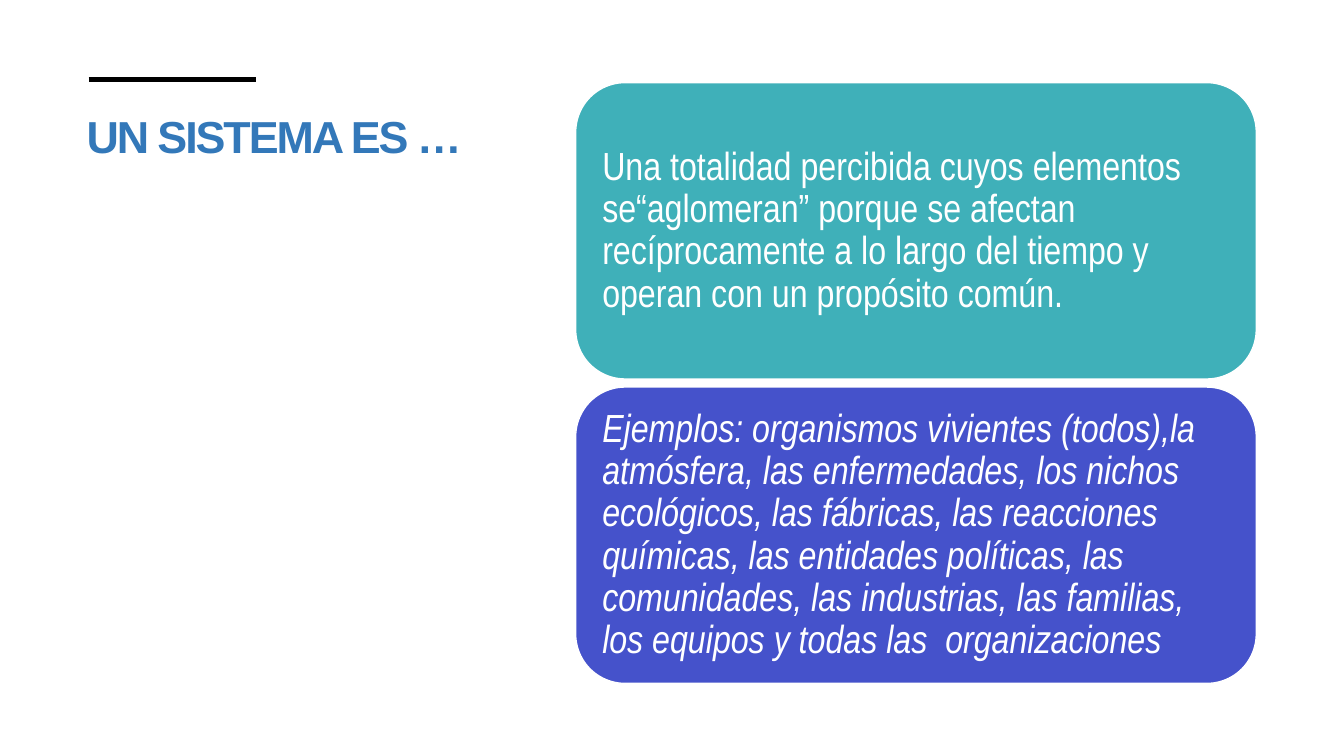
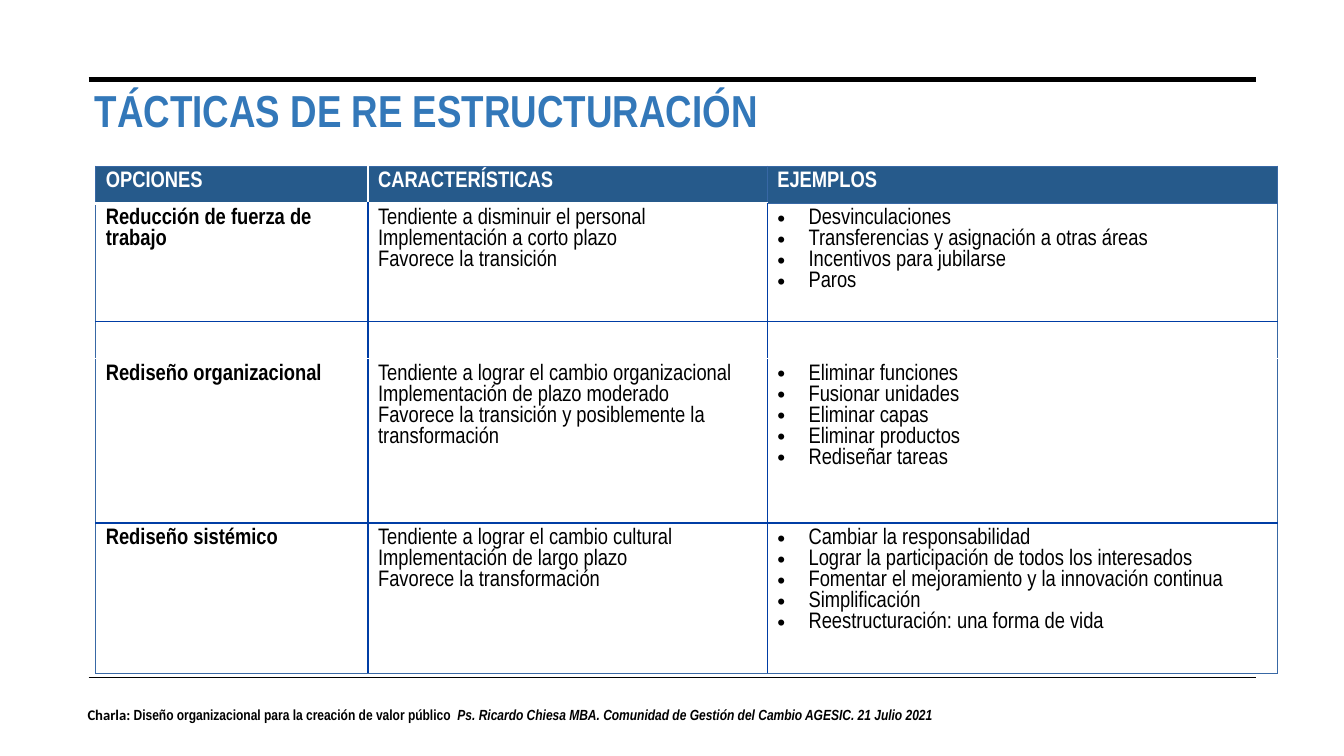
from dataclasses import dataclass

from lxml import etree
from pptx import Presentation
from pptx.dml.color import RGBColor
from pptx.enum import shapes, text
from pptx.oxml import ns
from pptx.util import Inches, Pt


@dataclass(frozen=True)
class Theme:
    black: str = "000000"
    white: str = "FFFFFF"
    title: str = "3378B9"
    teal: str = "3FB0B9"
    indigo: str = "4552CB"
    header: str = "265A8B"
    frame: str = "3868A5"
    grid: str = "003DA5"
    sans: str = "Arial"
    narrow: str = "Arial Narrow"
    footer_font: str = "Calibri"
    title_size: float = 32
    card_size: float = 28
    table_size: float = 16
    footer_size: float = 10.5
    table_leading: float = 15


T = Theme()
LEFT, RIGHT, RULE_Y = 0.88, 12.46, 0.79

CARDS = [
    ("Una totalidad percibida cuyos elementos se“aglomeran” porque se afectan "
     "recíprocamente a lo largo del tiempo y operan con un propósito común.",
     T.teal, False),
    ("Ejemplos: organismos vivientes (todos),la atmósfera, las enfermedades, "
     "los nichos ecológicos, las fábricas, las reacciones químicas, las "
     "entidades políticas, las comunidades, las industrias, las familias, "
     "los equipos y todas las  organizaciones", T.indigo, True),
]

HEADINGS = [["OPCIONES"], ["CARACTERÍSTICAS"], ["EJEMPLOS"]]
TACTICS = [
    [["Reducción de fuerza de trabajo"],
     ["Tendiente a disminuir el personal", "Implementación a corto plazo",
      "Favorece la transición"],
     ["Desvinculaciones", "Transferencias y asignación a otras áreas",
      "Incentivos para jubilarse", "Paros"]],
    [[], [], []],
    [["Rediseño organizacional"],
     ["Tendiente a lograr el cambio organizacional",
      "Implementación de plazo moderado",
      "Favorece la transición y posiblemente la transformación"],
     ["Eliminar funciones", "Fusionar unidades", "Eliminar capas",
      "Eliminar productos", "Rediseñar tareas"]],
    [["Rediseño sistémico"],
     ["Tendiente a lograr el cambio cultural", "Implementación de largo plazo",
      "Favorece la transformación"],
     ["Cambiar la responsabilidad",
      "Lograr la participación de todos los interesados",
      "Fomentar el mejoramiento y la innovación continua",
      "Simplificación", "Reestructuración: una forma de vida"]],
]
COLUMN_WIDTHS = [2.7, 3.96, 5.06]
ROW_HEIGHTS = [0.37, 1.17, 0.37, 1.63, 1.49]

# Edge colour and width; horizontal edges run top to bottom
FRAME, GRID, GAP = (T.frame, 1), (T.grid, 1), (T.white, 1)
ROW_EDGES = [FRAME, (T.white, 3), GRID, GAP, GRID, FRAME]
HEADER_SIDES = [FRAME, GAP, FRAME, FRAME]
BODY_SIDES = [FRAME, GRID, GRID, FRAME]


def rgb(value):
    return RGBColor.from_string(value)


def sub(parent, tag, **attributes):
    return etree.SubElement(parent, ns.qn(tag), attributes)


def write(frame, paragraphs, *, size, font=T.narrow, color=T.black, bold=False,
          italic=False, tracking=None, leading=None, bullet=False):
    """Fill a frame; a paragraph is a string or a list of (text, font, italic)."""
    for index, content in enumerate(paragraphs):
        para = frame.paragraphs[0] if index == 0 else frame.add_paragraph()
        para.alignment = text.PP_ALIGN.LEFT
        if leading:
            para.line_spacing = leading
        if bullet:
            props = para._p.get_or_add_pPr()
            props.set("marL", str(Inches(0.31)))
            props.set("indent", str(-Inches(0.31)))
            sub(props, "a:buFont", typeface=T.sans)
            sub(props, "a:buChar", char="•")
        pieces = [(content, font, italic)] if isinstance(content, str) else content
        for words, face, slanted in pieces:
            run = para.add_run()
            run.text = words
            run.font.name, run.font.size = face, Pt(size)
            run.font.bold, run.font.italic = bold, slanted
            run.font.color.rgb = rgb(color)
            if tracking:
                run._r.get_or_add_rPr().set("spc", str(round(tracking * 100)))


def text_box(slide, box, paragraphs, wrap=True, **style):
    frame = slide.shapes.add_textbox(*map(Inches, box)).text_frame
    frame.word_wrap = wrap
    write(frame, paragraphs, **style)


def title(slide, box, words, **style):
    text_box(slide, box, [words], size=T.title_size, color=T.title, bold=True, **style)


def rule(slide, y, right=RIGHT, width=3.5):
    line = slide.shapes.add_connector(
        shapes.MSO_CONNECTOR.STRAIGHT, *map(Inches, (LEFT, y, right, y)))
    line.line.color.rgb = rgb(T.black)
    line.line.width = Pt(width)
    sub(line._element.spPr, "a:effectLst")


def card_stack(slide, box, cards, gap=0.08):
    left, top, width, height = box
    card_height = (height - gap * (len(cards) - 1)) / len(cards)
    for index, (words, color, italic) in enumerate(cards):
        card = slide.shapes.add_shape(
            shapes.MSO_SHAPE.ROUNDED_RECTANGLE, Inches(left),
            Inches(top + index * (card_height + gap)),
            Inches(width), Inches(card_height))
        card.shadow.inherit = False
        card.fill.solid()
        card.fill.fore_color.rgb = rgb(color)
        card.line.color.rgb = rgb(T.white)
        card.line.width = Pt(1)
        frame = card.text_frame
        frame.word_wrap = True
        frame.vertical_anchor = text.MSO_ANCHOR.MIDDLE
        frame.margin_left = frame.margin_right = Inches(0.12)
        frame.margin_top = frame.margin_bottom = Inches(0.12)
        write(frame, [words], size=T.card_size, color=T.white,
              italic=italic, leading=0.9)


def set_borders(cell, **edges):
    props = cell._tc.get_or_add_tcPr()
    for side in "LRTB":
        color, width = edges[side]
        line = sub(props, f"a:ln{side}", w=str(Pt(width)))
        sub(sub(line, "a:solidFill"), "a:srgbClr", val=color)


def tactics_table(slide, left, top):
    rows = [HEADINGS] + TACTICS
    table = slide.shapes.add_table(
        len(rows), len(COLUMN_WIDTHS), Inches(left), Inches(top),
        Inches(sum(COLUMN_WIDTHS)), Inches(sum(ROW_HEIGHTS))).table
    table.first_row = table.horz_banding = False
    for column, width in zip(table.columns, COLUMN_WIDTHS):
        column.width = Inches(width)
    for row, height in zip(table.rows, ROW_HEIGHTS):
        row.height = Inches(height)

    for r, contents in enumerate(rows):
        header = r == 0
        sides = HEADER_SIDES if header else BODY_SIDES
        for c, lines in enumerate(contents):
            cell = table.cell(r, c)
            # The last column keeps a frame-coloured edge below its heading
            above, below = (FRAME if c == 2 and edge == 1 else ROW_EDGES[edge]
                            for edge in (r, r + 1))
            set_borders(cell, L=sides[c], R=sides[c + 1], T=above, B=below)
            cell.fill.solid()
            cell.fill.fore_color.rgb = rgb(T.header if header else T.white)
            write(cell.text_frame, lines, size=T.table_size,
                  color=T.white if header else T.black,
                  bold=header or c == 0, leading=Pt(T.table_leading),
                  bullet=c == 2 and not header)
            if not lines:
                sub(cell.text_frame.paragraphs[0]._p, "a:endParaRPr",
                    sz=str(T.table_size * 100))


def footer(slide, box):
    text_box(slide, box, [[
        ("Charla: ", T.footer_font, False),
        ("Diseño organizacional para la creación de valor público  ", T.narrow, False),
        ("Ps. Ricardo Chiesa MBA. Comunidad de Gestión del Cambio AGESIC. "
         "21 Julio 2021", T.narrow, True),
    ]], size=T.footer_size, bold=True)


def system_slide(slide):
    title(slide, (0.76, 1.03, 4.28, 4.31), "UN SISTEMA ES …",
          font=T.sans, tracking=-1.5)
    rule(slide, RULE_Y, right=2.54)
    card_stack(slide, (5.71, 0.82, 6.75, 5.96), CARDS)


def tactics_slide(slide):
    rule(slide, RULE_Y)
    rule(slide, 6.72, width=1)
    footer(slide, (0.77, 6.95, 9.53, 0.47))
    tactics_table(slide, 0.95, 1.65)
    title(slide, (0.84, 0.77, 6.85, 0.64), "TÁCTICAS DE RE ESTRUCTURACIÓN", wrap=False)


def main():
    deck = Presentation()
    deck.slide_width, deck.slide_height = Inches(13.33), Inches(7.5)
    for build in (system_slide, tactics_slide):
        build(deck.slides.add_slide(deck.slide_layouts[6]))
    deck.save("out.pptx")


if __name__ == "__main__":
    main()
